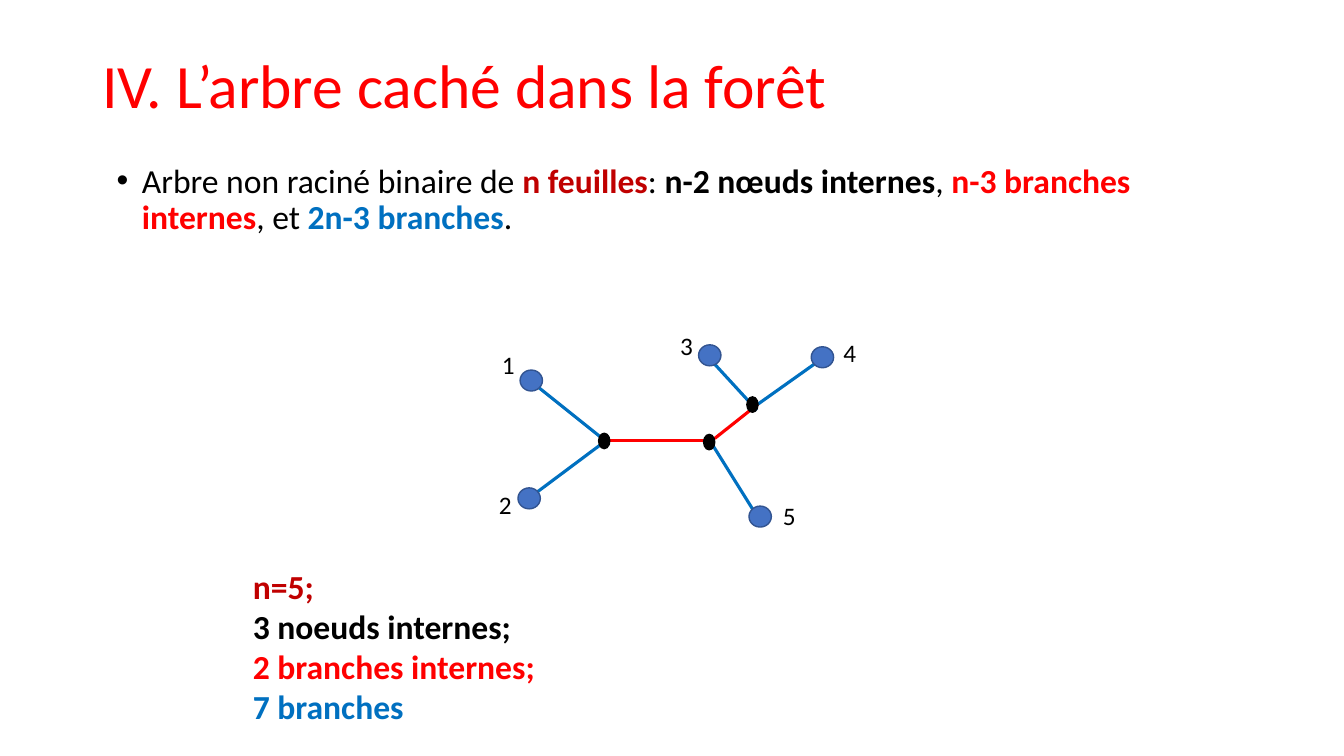
import pptx
import pptx.dml.color
import pptx.enum.shapes
import pptx.enum.text
import pptx.oxml.ns
import pptx.util
import lxml.etree

# Theme
THEME = {
    "font": "Calibri",
    "title_size": 44, "body_size": 24, "label_size": 18,
    "branch_width": 2.25, "outline_width": 1,
    "black": "000000", "red": "FF0000", "dark_red": "C00000", "blue": "0070C0",
    "leaf": "4472C4", "leaf_outline": "325491",
}

# Content: text runs are (text, colour, bold)
TITLE = [[("IV. L’arbre caché dans la forêt", "red", False)]]
STATEMENT = [[
    ("Arbre non raciné binaire de ", "black", False),
    ("n feuilles", "dark_red", True),
    (": ", "black", False),
    ("n-2 nœuds internes", "black", True),
    (", ", "black", False),
    ("n-3 branches internes", "red", True),
    (", et ", "black", False),
    ("2n-3 branches", "blue", True),
    (".", "black", False),
]]
COUNTS = [
    [("n=5;", "dark_red", True)],
    [("3 noeuds internes;", "black", True)],
    [("2 branches internes;", "red", True)],
    [("7 branches", "blue", True)],
]

# Tree, in points: leaf centre and left top corner of its label
LEAVES = {
    "1": ((379.5, 271.8), (351.4, 246.2)),
    "2": ((378, 356), (349.2, 346.3)),
    "3": ((507, 253.8), (478.8, 232.6)),
    "4": ((587.5, 255.2), (595.4, 237.6)),
    "5": ((543, 369), (552.2, 353.5)),
}
INTERNAL_NODES = [(431.6, 315), (506.6, 315.8), (537.5, 289)]
BRANCHES = [
    ("red", (432, 314.6), (507, 314.6)),
    ("red", (510.5, 313.2), (541.4, 288.7)),
    ("blue", (378, 271.4), (432, 314.6)),
    ("blue", (378, 355.7), (432, 315.4)),
    ("blue", (507, 314.6), (540.7, 368.6)),
    ("blue", (540.7, 293), (507, 256.3)),
    ("blue", (541.4, 288.7), (581.8, 260)),
]
LEAF_SIZE = (16, 15)
NODE_SIZE = (8, 11)
LABEL_SIZE = (23.8, 28.8)


def points(*values):
    return [pptx.util.Pt(value) for value in values]


def colour(name):
    return pptx.dml.color.RGBColor.from_string(THEME[name])


def set_values(target, values):
    for name, value in values.items():
        setattr(target, name, value)


def write(frame, paragraphs, size, frame_format, paragraph_format=None):
    set_values(frame, frame_format)
    for index, runs in enumerate(paragraphs):
        paragraph = frame.paragraphs[0] if index == 0 else frame.add_paragraph()
        set_values(paragraph, paragraph_format or {})
        for text, colour_name, bold in runs:
            run = paragraph.add_run()
            run.text = text
            set_values(run.font, {"name": THEME["font"], "bold": bold,
                                  "size": pptx.util.Pt(THEME[size])})
            run.font.color.rgb = colour(colour_name)


def add_text(slide, box, *text_arguments):
    shape = slide.shapes.add_textbox(*points(*box))
    write(shape.text_frame, *text_arguments)
    return shape


def add_dot(slide, centre, size, fill, outline):
    left, top = (middle - length / 2 for middle, length in zip(centre, size))
    shape = slide.shapes.add_shape(
        pptx.enum.shapes.MSO_SHAPE.OVAL, *points(left, top, *size))
    shape.shadow.inherit = False
    shape.fill.solid()
    shape.fill.fore_color.rgb = colour(fill)
    shape.line.color.rgb = colour(outline)
    shape.line.width = pptx.util.Pt(THEME["outline_width"])


def add_branch(slide, colour_name, start, end):
    branch = slide.shapes.add_connector(
        pptx.enum.shapes.MSO_CONNECTOR.STRAIGHT, *points(*start, *end))
    branch.line.color.rgb = colour(colour_name)
    branch.line.width = pptx.util.Pt(THEME["branch_width"])
    lxml.etree.SubElement(branch._element.spPr, pptx.oxml.ns.qn("a:effectLst"))


def add_bullet(paragraph, indent):
    properties = paragraph._p.get_or_add_pPr()
    properties.set("marL", str(pptx.util.Pt(indent)))
    properties.set("indent", str(-pptx.util.Pt(indent)))
    bullet_font = lxml.etree.SubElement(properties, pptx.oxml.ns.qn("a:buFont"))
    bullet_font.set("typeface", "Arial")
    bullet = lxml.etree.SubElement(properties, pptx.oxml.ns.qn("a:buChar"))
    bullet.set("char", "•")


def main():
    presentation = pptx.Presentation()
    set_values(presentation, {"slide_width": pptx.util.Pt(960),
                              "slide_height": pptx.util.Pt(540)})
    slide = presentation.slides.add_slide(presentation.slide_layouts[5])
    left_aligned = {"alignment": pptx.enum.text.PP_ALIGN.LEFT, "line_spacing": 0.9}
    wrapped = {"word_wrap": True, "auto_size": pptx.enum.text.MSO_AUTO_SIZE.NONE}
    growing = {"word_wrap": False,
               "auto_size": pptx.enum.text.MSO_AUTO_SIZE.SHAPE_TO_FIT_TEXT}

    # Title
    title = slide.shapes.title
    set_values(title, dict(zip(("left", "top", "width", "height"),
                               points(66, 10.8, 828, 104.4))))
    middle = {"vertical_anchor": pptx.enum.text.MSO_ANCHOR.MIDDLE}
    write(title.text_frame, TITLE, "title_size", wrapped | middle, left_aligned)

    # Statement and counts
    statement = add_text(slide, (76.3, 113.8, 820, 93.6), STATEMENT, "body_size",
                         wrapped, left_aligned | {"space_before": pptx.util.Pt(10)})
    add_bullet(statement.text_frame.paragraphs[0], 18)
    add_text(slide, (173.5, 400.3, 221, 123.8), COUNTS, "body_size", growing)

    # Tree: branches, then leaves with labels, then internal nodes
    for branch in BRANCHES:
        add_branch(slide, *branch)
    for label, (centre, corner) in LEAVES.items():
        add_dot(slide, centre, LEAF_SIZE, "leaf", "leaf_outline")
        add_text(slide, corner + LABEL_SIZE, [[(label, "black", False)]],
                 "label_size", growing)
    for centre in INTERNAL_NODES:
        add_dot(slide, centre, NODE_SIZE, "black", "black")

    presentation.save("out.pptx")


if __name__ == "__main__":
    main()
